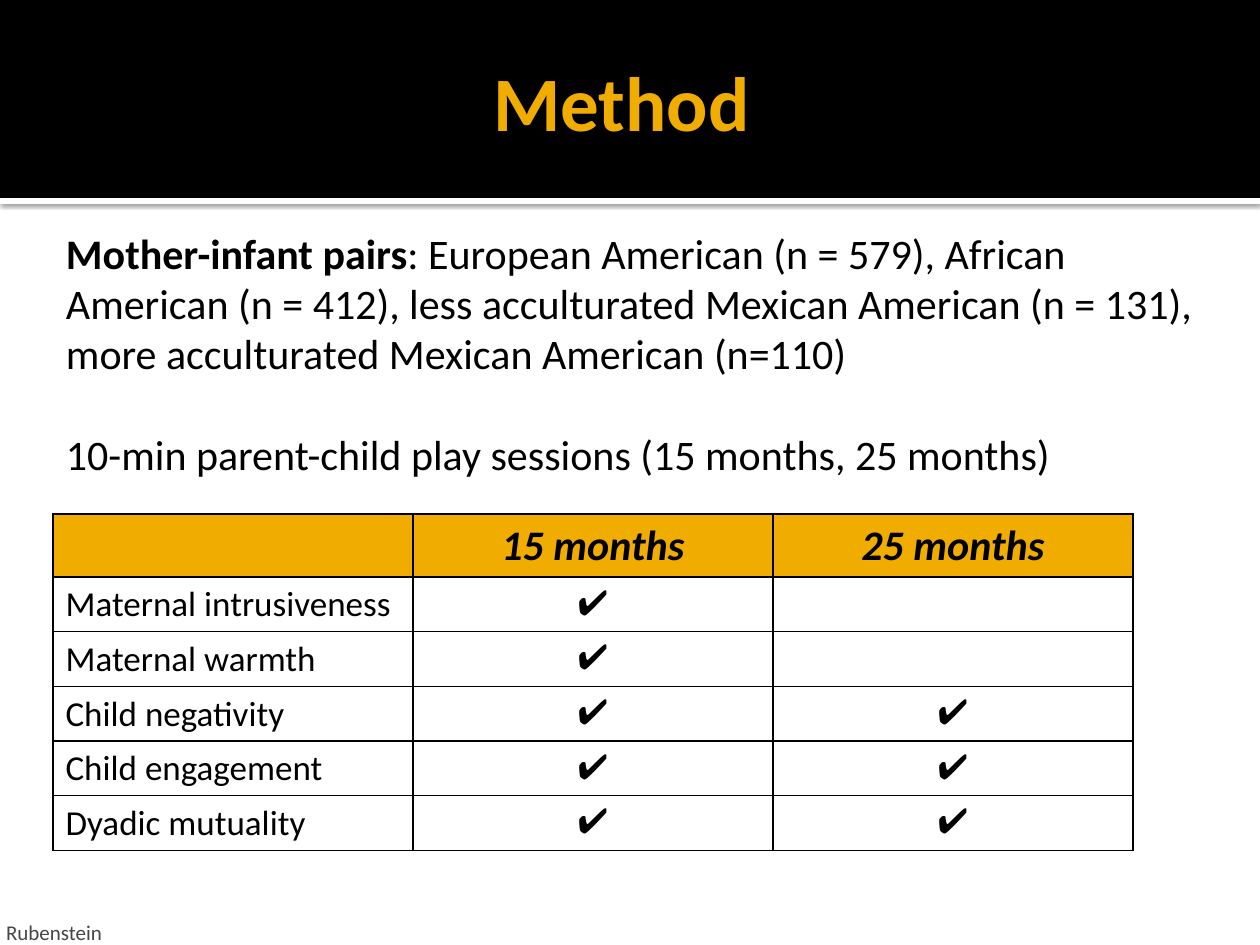
from lxml import etree
from pptx import Presentation
from pptx.dml.color import RGBColor
from pptx.enum.shapes import MSO_SHAPE
from pptx.enum.text import MSO_ANCHOR, PP_ALIGN
from pptx.oxml.ns import qn
from pptx.util import Emu, Pt

BLACK = RGBColor(0x00, 0x00, 0x00)
WHITE = RGBColor(0xFF, 0xFF, 0xFF)
AMBER = RGBColor(0xF0, 0xAD, 0x00)
GRAY = RGBColor(0x45, 0x45, 0x45)
RECT = MSO_SHAPE.RECTANGLE
LEFT, CENTER = PP_ALIGN.LEFT, PP_ALIGN.CENTER
TOP, MIDDLE, BOTTOM = MSO_ANCHOR.TOP, MSO_ANCHOR.MIDDLE, MSO_ANCHOR.BOTTOM
PX_PER_INCH = 126


def px(n):
    return Emu(round(n * 914400 / PX_PER_INCH))


class Deck:
    font = "Calibri"

    def __init__(self, width, height):
        self.prs = Presentation()
        self.prs.slide_width, self.prs.slide_height = px(width), px(height)
        self.s = self.prs.slides.add_slide(self.prs.slide_layouts[6])

    def band(self, x, y, w, h, color):
        sp = self.s.shapes.add_shape(RECT, px(x), px(y), px(w), px(h))
        sp.shadow.inherit = False
        sp.fill.solid()
        sp.fill.fore_color.rgb = color
        sp.line.fill.background()
        return sp

    def shadow(self, sp, blur, dist, alpha):
        effects = sp._element.spPr.find(qn("a:effectLst"))
        outer = etree.SubElement(effects, qn("a:outerShdw"), blurRad=str(Pt(blur)),
                                 dist=str(Pt(dist)), dir="5400000", algn="tl", rotWithShape="0")
        color = etree.SubElement(outer, qn("a:srgbClr"), val=str(BLACK))
        etree.SubElement(color, qn("a:alpha"), val=str(alpha * 1000))

    def style(self, p, size, color=BLACK, align=LEFT, font=None, bold=None, italic=None):
        p.alignment = align
        f = p.font
        f.name, f.size, f.bold, f.italic = font or self.font, Pt(size), bold, italic
        f.color.rgb = color

    def text(self, x, y, w, h, paragraphs, size, color=BLACK, align=LEFT, anchor=TOP,
             margins=(13, 6, 13, 6), bold=None, gap=0):
        tf = self.s.shapes.add_textbox(px(x), px(y), px(w), px(h)).text_frame
        tf.word_wrap = True
        tf.vertical_anchor = anchor
        tf.margin_left, tf.margin_top, tf.margin_right, tf.margin_bottom = map(px, margins)
        for i, runs in enumerate(paragraphs):
            p = tf.add_paragraph() if i else tf.paragraphs[0]
            self.style(p, size, color, align, bold=bold)
            if i:
                p.space_before = Pt(gap)
            for content, strong in runs:
                r = p.add_run()
                r.text = content
                if strong:
                    r.font.bold = True

    def borders(self, cell):
        tcPr = cell._tc.get_or_add_tcPr()
        for i, side in enumerate(("a:lnL", "a:lnR", "a:lnT", "a:lnB")):
            ln = etree.Element(qn(side), w=str(Pt(1)))
            fill = etree.SubElement(ln, qn("a:solidFill"))
            etree.SubElement(fill, qn("a:srgbClr"), val=str(BLACK))
            tcPr.insert(i, ln)

    def table(self, x, y, col_w, head_h, row_h, rows):
        n_rows, n_cols = len(rows), len(rows[0])
        height = head_h + row_h * (n_rows - 1)
        table = self.s.shapes.add_table(n_rows, n_cols, px(x), px(y),
                                        px(col_w * n_cols), px(height)).table
        for column in table.columns:
            column.width = px(col_w)
        for i, values in enumerate(rows):
            table.rows[i].height = px(row_h if i else head_h)
            for j, value in enumerate(values):
                cell = table.cell(i, j)
                cell.text = value
                cell.fill.solid()
                cell.fill.fore_color.rgb = WHITE if i else AMBER
                self.borders(cell)
                self.style(cell.text_frame.paragraphs[0], 20 if i else 24,
                           align=CENTER if j else LEFT,
                           font="Arial" if i and j else None,
                           bold=i == 0, italic=i == 0)


def main():
    deck = Deck(1260, 945)
    rule = deck.band(0, 198, 1260, 6, WHITE)
    deck.shadow(rule, blur=2.5, dist=0.8, alpha=60)
    deck.band(0, 0, 1260, 198, BLACK)
    deck.text(10, 21, 1217, 160, [[("Method", False)]], 44, AMBER, CENTER, MIDDLE,
              margins=(12, 6, 6, 6), bold=True)
    deck.text(0, 911, 752, 34, [[("Rubenstein", False)]], 12, GRAY, anchor=BOTTOM,
              margins=(6, 6, 6, 0))
    sample = (": European American (n = 579), African American (n = 412), "
              "less acculturated Mexican American (n = 131), "
              "more acculturated Mexican American (n=110)")
    sessions = "10-min parent-child play sessions (15 months, 25 months)"
    deck.text(53, 221, 1166, 420,
              [[("Mother-infant pairs", True), (sample, False)], [(sessions, False)]],
              24, gap=29)
    deck.table(53, 514, 360, 59, 52, [
        ("", "15 months", "25 months"),
        ("Maternal intrusiveness", "✔", ""),
        ("Maternal warmth", "✔", ""),
        ("Child negativity", "✔", "✔"),
        ("Child engagement", "✔", "✔"),
        ("Dyadic mutuality", "✔", "✔"),
    ])
    deck.prs.save("out.pptx")


if __name__ == "__main__":
    main()
